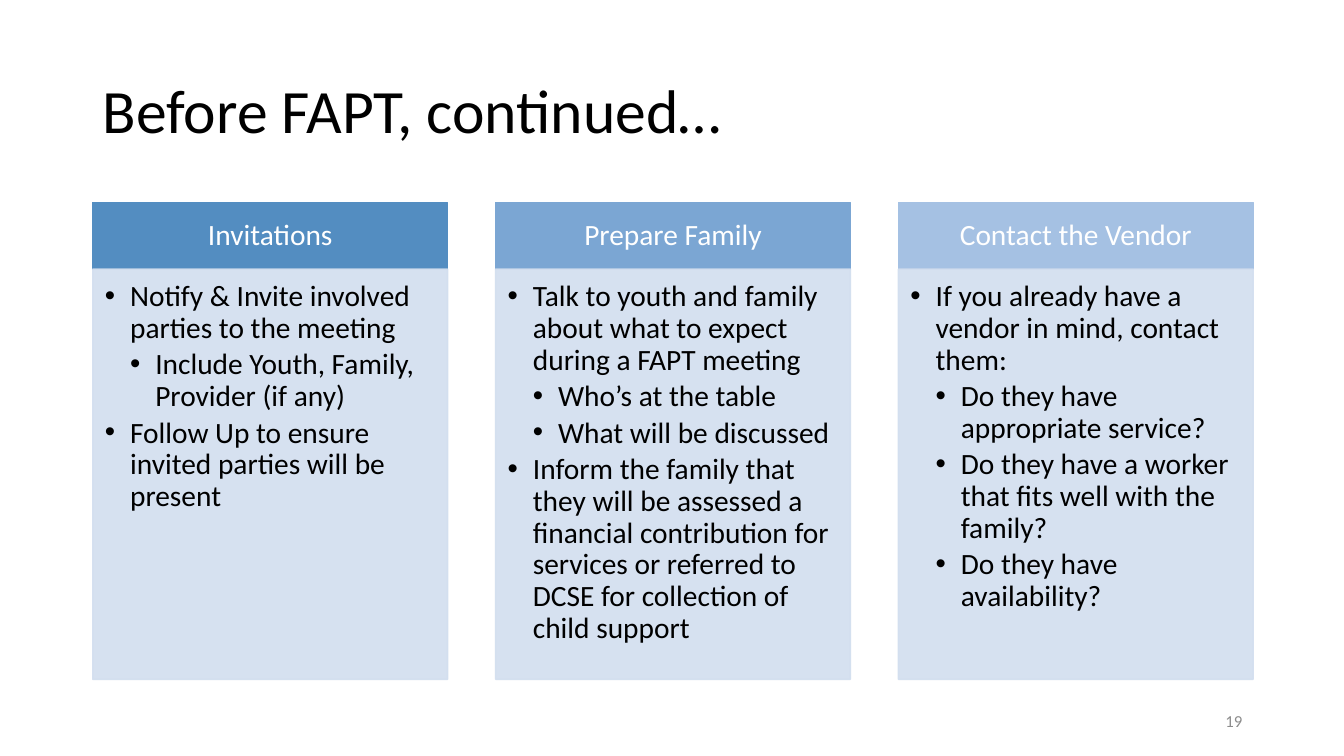
from dataclasses import dataclass

import lxml.etree
import pptx
import pptx.dml.color
import pptx.dml.fill
import pptx.enum.shapes
import pptx.enum.text
import pptx.oxml.ns
import pptx.shapes.autoshape
import pptx.slide
import pptx.text.text
import pptx.util

Inches = pptx.util.Inches
Align = pptx.enum.text.PP_ALIGN
Anchor = pptx.enum.text.MSO_ANCHOR
qn = pptx.oxml.ns.qn


@dataclass(frozen=True)
class Theme:
    font: str = "Calibri"
    title_size: float = 44
    card_size: float = 21
    number_size: float = 12
    text: str = "000000"
    heading: str = "FFFFFF"
    number: str = "8C8C8C"
    panel: str = "D2DEEF"
    panel_opacity: int = 90
    line_spacing: float = 0.9
    item_gap: float = 3.4


@dataclass(frozen=True)
class Item:
    text: str
    level: int = 0


@dataclass(frozen=True)
class Card:
    heading: str
    color: str
    items: tuple[Item, ...]


THEME = Theme()
CARD_LEFT, CARD_TOP, CARD_WIDTH, CARD_PITCH = 0.92, 2.01, 3.52, 3.995
HEADING_HEIGHT, PANEL_HEIGHT = 0.66, 4.07
INDENT = 0.25

CARDS = (
    Card("Invitations", "538DC1", (
        Item("Notify & Invite involved parties to the meeting"),
        Item("Include Youth, Family, Provider (if any)", 1),
        Item("Follow Up to ensure invited parties will be present"),
    )),
    Card("Prepare Family", "7BA6D3", (
        Item("Talk to youth and family about what to expect during a FAPT meeting"),
        Item("Who’s at the table", 1),
        Item("What will be discussed", 1),
        Item("Inform the family that they will be assessed a financial contribution "
             "for services or referred to DCSE for collection of child support"),
    )),
    Card("Contact the Vendor", "A5C1E3", (
        Item("If you already have a vendor in mind, contact them:"),
        Item("Do they have appropriate service?", 1),
        Item("Do they have a worker that fits well with the family?", 1),
        Item("Do they have availability?", 1),
    )),
)


def format_paragraph(paragraph: pptx.text.text._Paragraph, size: float,
                     color: str, align: Align = Align.LEFT) -> None:
    paragraph.alignment = align
    paragraph.line_spacing = THEME.line_spacing
    paragraph.font.name = THEME.font
    paragraph.font.size = pptx.util.Pt(size)
    paragraph.font.color.rgb = pptx.dml.color.RGBColor.from_string(color)


def set_insets(frame: pptx.text.text.TextFrame, left: float, top: float,
               right: float, bottom: float) -> None:
    frame.margin_left, frame.margin_top = Inches(left), Inches(top)
    frame.margin_right, frame.margin_bottom = Inches(right), Inches(bottom)


def add_bullet(paragraph: pptx.text.text._Paragraph, level: int) -> None:
    """Give the paragraph a hanging bullet; call before setting its font."""
    paragraph.level = level
    properties = paragraph._p.get_or_add_pPr()
    properties.set("marL", str(Inches(INDENT * (level + 1))))
    properties.set("indent", str(Inches(-INDENT)))
    lxml.etree.SubElement(properties, qn("a:buFont"), typeface="Arial")
    lxml.etree.SubElement(properties, qn("a:buChar"), char="•")


def add_box(slide: pptx.slide.Slide, left: float, top: float, height: float,
            color: str, opacity: int = 100) -> pptx.shapes.autoshape.Shape:
    box = slide.shapes.add_shape(
        pptx.enum.shapes.MSO_SHAPE.RECTANGLE,
        Inches(left), Inches(top), Inches(CARD_WIDTH), Inches(height))
    box.shadow.inherit = False
    box.line.width = pptx.util.Pt(1)
    for fill in (box.fill, box.line.fill):
        fill.solid()
        fill.fore_color.rgb = pptx.dml.color.RGBColor.from_string(color)
    if opacity < 100:
        for rgb in box._element.spPr.iter(qn("a:srgbClr")):
            lxml.etree.SubElement(rgb, qn("a:alpha"), val=str(opacity * 1000))
    box.text_frame.word_wrap = True
    return box


def add_card(slide: pptx.slide.Slide, card: Card, left: float) -> None:
    heading = add_box(slide, left, CARD_TOP, HEADING_HEIGHT, card.color).text_frame
    heading.vertical_anchor = Anchor.MIDDLE
    set_insets(heading, 0.16, 0.09, 0.16, 0.09)
    heading.text = card.heading
    format_paragraph(heading.paragraphs[0], THEME.card_size, THEME.heading, Align.CENTER)

    panel = add_box(slide, left, CARD_TOP + HEADING_HEIGHT, PANEL_HEIGHT,
                    THEME.panel, THEME.panel_opacity).text_frame
    panel.vertical_anchor = Anchor.TOP
    set_insets(panel, 0.12, 0.12, 0.16, 0.18)
    panel.text = "\n".join(item.text for item in card.items)
    for paragraph, item in zip(panel.paragraphs, card.items):
        paragraph.space_after = pptx.util.Pt(THEME.item_gap)
        add_bullet(paragraph, item.level)
        format_paragraph(paragraph, THEME.card_size, THEME.text)


def add_title(slide: pptx.slide.Slide, text: str) -> None:
    title = slide.shapes.title
    title.left, title.top = Inches(0.92), Inches(0.4)
    title.width, title.height = Inches(11.5), Inches(1.45)
    title.text_frame.text = text
    title.text_frame.auto_size = pptx.enum.text.MSO_AUTO_SIZE.NONE
    title.text_frame.vertical_anchor = Anchor.MIDDLE
    format_paragraph(title.text_frame.paragraphs[0], THEME.title_size, THEME.text)


def add_page_number(slide: pptx.slide.Slide, number: str) -> None:
    frame = slide.shapes.add_textbox(
        Inches(9.42), Inches(6.95), Inches(3), Inches(0.4)).text_frame
    frame.word_wrap = True
    frame.vertical_anchor = Anchor.MIDDLE
    frame.text = number
    format_paragraph(frame.paragraphs[0], THEME.number_size, THEME.number, Align.RIGHT)
    frame.paragraphs[0].line_spacing = 1.0


def main() -> None:
    presentation = pptx.Presentation()
    presentation.slide_width, presentation.slide_height = Inches(13.33), Inches(7.5)
    title_only = presentation.slide_layouts.get_by_name("Title Only")
    slide = presentation.slides.add_slide(title_only)
    add_title(slide, "Before FAPT, continued…")
    for column, card in enumerate(CARDS):
        add_card(slide, card, CARD_LEFT + column * CARD_PITCH)
    add_page_number(slide, "19")
    presentation.save("out.pptx")


if __name__ == "__main__":
    main()
